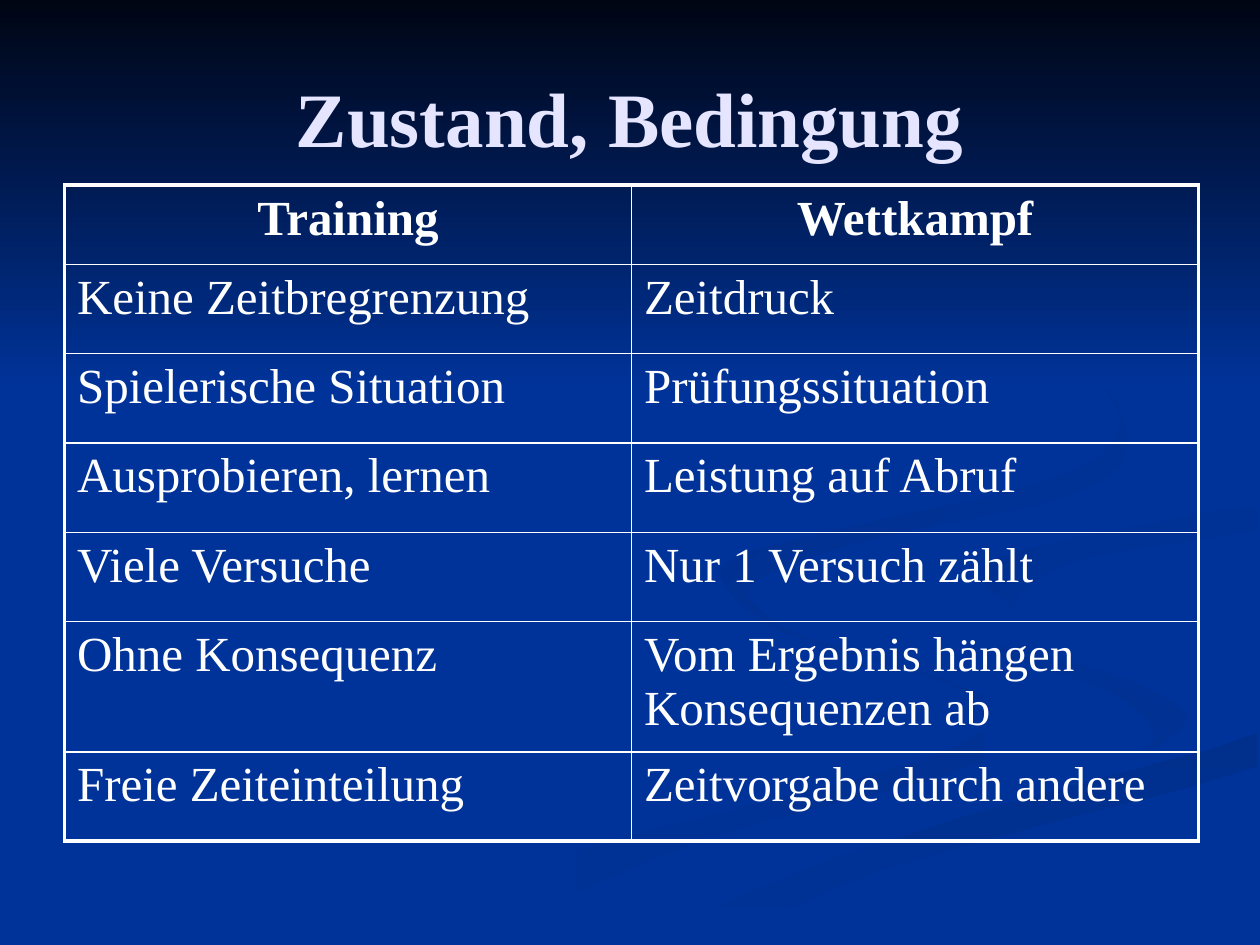
import pptx
import pptx.dml.color
import pptx.enum.shapes
import pptx.enum.text
import pptx.oxml
import pptx.oxml.ns
import pptx.util
from pptx.util import Cm

FONT = "Times New Roman"
COLORS = {
    "blue": "003399", "night": "000514", "title": "E5E5FF", "white": "FFFFFF",
    "dusk": "003193", "deep": "002F8C", "shade": "003091", "ink": "002F8E",
}
UNIT = Cm(0.03)
ROWS = [
    ("Training", "Wettkampf"),
    ("Keine Zeitbregrenzung", "Zeitdruck"),
    ("Spielerische Situation", "Prüfungssituation"),
    ("Ausprobieren, lernen", "Leistung auf Abruf"),
    ("Viele Versuche", "Nur 1 Versuch zählt"),
    ("Ohne Konsequenz", "Vom Ergebnis hängen Konsequenzen ab"),
    ("Freie Zeiteinteilung", "Zeitvorgabe durch andere"),
]
TALL = {0: 1.6, 5: 2.44}
WAVES = [
    ("blue", "dusk", 0, [
        (661, 468), (519, 420), (487, 389), (519, 422), (661, 471), (616, 512),
        (388, 571), (254, 634), (306, 634), (477, 563), (660, 512)]),
    ("blue", "dusk", 45, [
        (798, 483), (745, 452), (631, 421), (613, 393), (639, 428), (745, 465),
        (776, 495), (757, 512)]),
    ("deep", "blue", 90, [
        (426, 634), (483, 634), (590, 585), (845, 515), (845, 492), (675, 540),
        (533, 587)]),
    ("blue", "blue", 0, [
        (614, 393), (642, 421), (766, 457), (798, 483), (763, 510), (561, 565),
        (404, 634), (426, 634), (533, 587), (675, 540), (846, 492), (846, 455),
        (704, 422), (661, 392), (687, 370), (846, 340), (846, 328), (639, 366)]),
    ("shade", "blue", 45, [
        (661, 390), (699, 420), (682, 403), (728, 375), (845, 356), (845, 340),
        (686, 370)]),
    ("ink", "blue", 45, [
        (578, 364), (724, 331), (757, 291), (714, 233), (645, 197), (716, 236),
        (753, 284), (703, 323), (506, 370), (489, 396), (527, 423), (503, 394)]),
]


def tint(name):
    return pptx.dml.color.RGBColor.from_string(COLORS[name])


def style(para, size, color, bold, center):
    font = para.font
    font.name, font.size, font.bold = FONT, pptx.util.Pt(size), bold
    font.color.rgb = tint(color)
    align = pptx.enum.text.PP_ALIGN
    para.alignment = align.CENTER if center else align.LEFT


def shade(shape, start, end, angle):
    shape.shadow.inherit = False
    shape.line.fill.background()
    if start == end:
        shape.fill.solid()
        shape.fill.fore_color.rgb = tint(start)
        return
    shape.fill.gradient()
    shape.fill.gradient_angle = (360 - angle) % 360
    for stop, name, place in zip(shape.fill.gradient_stops, (start, end), (0, 1)):
        stop.color.rgb = tint(name)
        stop.position = place


def curve(points, steps=4):
    right = max(x for x, y in points)
    low = max(y for x, y in points)
    count = len(points)
    path = []
    for i in range(count):
        near = [points[(i + k) % count] for k in (-1, 0, 1, 2)]
        for step in range(steps):
            t = step / steps
            x, y = [
                b + t * (c - a + t * (2 * a - 5 * b + 4 * c - d
                                      + t * (3 * (b - c) + d - a))) / 2
                for a, b, c, d in zip(*near)]
            path.append((min(x, right), min(y, low)))
    return path


def add_wave(slide, start, end, angle, points):
    path = curve(points)
    pen = slide.shapes.build_freeform(*path[0], scale=UNIT)
    pen.add_line_segments(path[1:], close=True)
    shade(pen.convert_to_shape(), start, end, angle)


def add_sky(slide):
    kind = pptx.enum.shapes.MSO_SHAPE.RECTANGLE
    sky = slide.shapes.add_shape(kind, 0, 0, Cm(25.4), Cm(7.82))
    shade(sky, "night", "blue", 90)


def add_title(slide, text):
    frame = slide.shapes.add_textbox(Cm(1.27), Cm(0.76), Cm(22.86), Cm(3.18)).text_frame
    frame.word_wrap = True
    frame.vertical_anchor = pptx.enum.text.MSO_ANCHOR.MIDDLE
    frame.text = text
    style(frame.paragraphs[0], 44, "title", True, True)


def set_edges(cell, widths):
    props = cell._tc.get_or_add_tcPr()
    for index, (side, width) in enumerate(zip("LRTB", widths)):
        edge = pptx.oxml.parse_xml(
            f'<a:ln{side} {pptx.oxml.ns.nsdecls("a")} w="{pptx.util.Pt(width)}">'
            f'<a:solidFill><a:srgbClr val="{COLORS["white"]}"/></a:solidFill>'
            f'</a:ln{side}>')
        props.insert(index, edge)


def add_grid(slide, rows):
    last, end = len(rows) - 1, len(rows[0]) - 1
    sizes = [TALL.get(r, 1.8) for r in range(len(rows))]
    table = slide.shapes.add_table(
        len(rows), len(rows[0]), Cm(1.3), Cm(3.73), Cm(22.86), Cm(sum(sizes))).table
    table.first_row = table.horz_banding = False
    for r, (texts, size) in enumerate(zip(rows, sizes)):
        table.rows[r].height = Cm(size)
        for c, text in enumerate(texts):
            cell = table.cell(r, c)
            cell.text = text
            cell.fill.background()
            style(cell.text_frame.paragraphs[0], 28, "white", r == 0, r == 0)
            outer = (c == 0, c == end, r == 0, r == last)
            set_edges(cell, [2.25 if edge else 1 for edge in outer])


def main():
    deck = pptx.Presentation()
    deck.slide_width, deck.slide_height = Cm(25.4), Cm(19.05)
    slide = deck.slides.add_slide(deck.slide_layouts[6])
    slide.background.fill.solid()
    slide.background.fill.fore_color.rgb = tint("blue")
    for wave in WAVES:
        add_wave(slide, *wave)
    add_sky(slide)
    add_title(slide, "Zustand, Bedingung")
    add_grid(slide, ROWS)
    deck.save("out.pptx")


if __name__ == "__main__":
    main()
